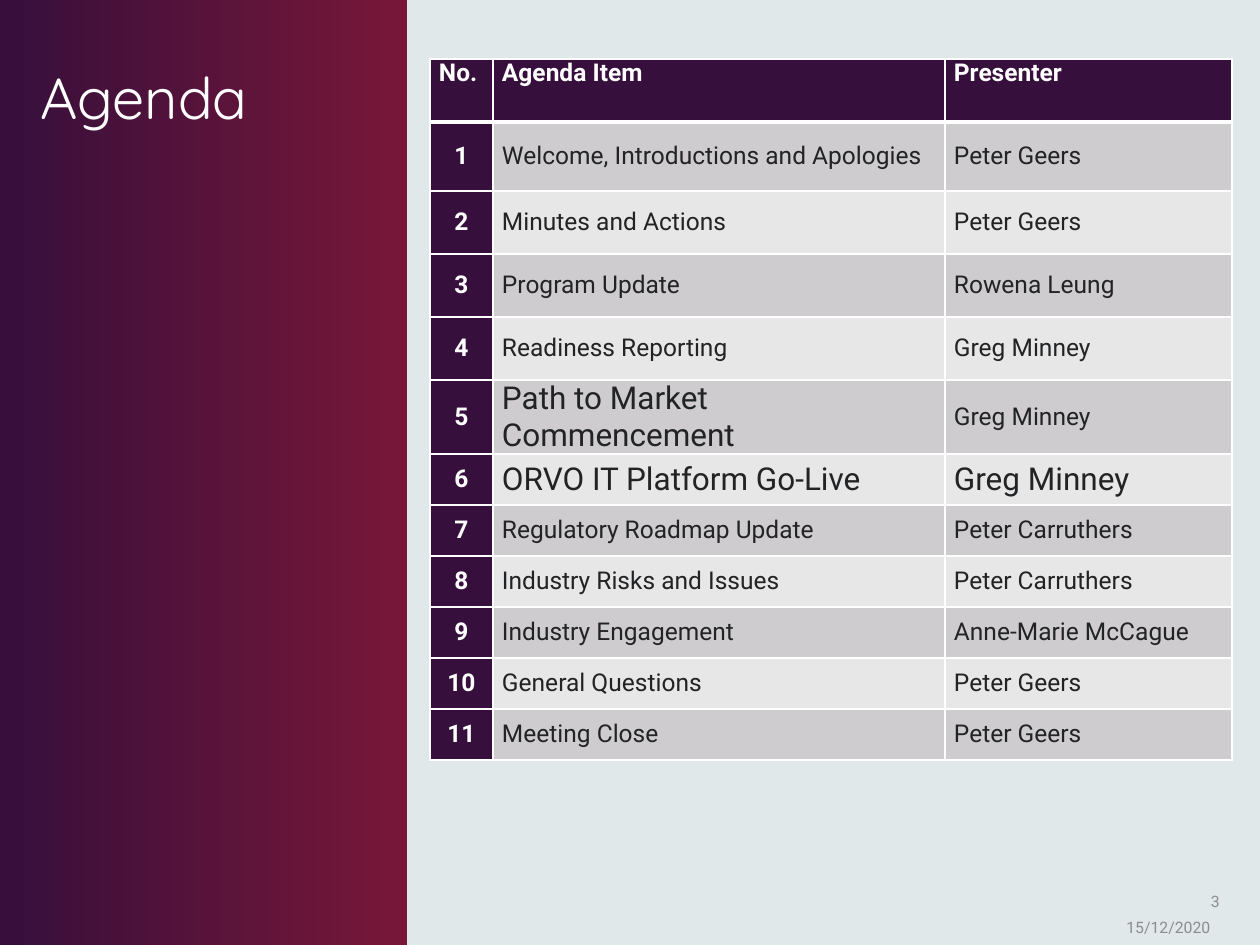
from dataclasses import dataclass

from lxml import etree
from pptx import Presentation
from pptx import util as u
from pptx.dml.color import RGBColor
from pptx.enum import shapes, text
from pptx.oxml.ns import qn

PX_PER_INCH = 126
PURPLE = RGBColor(0x36, 0x0F, 0x3C)
CRIMSON = RGBColor(0x77, 0x17, 0x38)
PALE = RGBColor(0xE0, 0xE8, 0xEA)
WHITE = RGBColor(0xFF, 0xFF, 0xFF)
INK = RGBColor(0x22, 0x23, 0x24)
MUTED = RGBColor(0x8D, 0x8D, 0x8E)
BANDS = RGBColor(0xCE, 0xCC, 0xCE), RGBColor(0xE8, 0xE7, 0xE8)

HEADINGS = "No.", "Agenda Item", "Presenter"
HEADING_HEIGHT = 63
COLUMN_WIDTHS = 63, 452, 287


@dataclass
class AgendaItem:
    title: str
    presenter: str
    height: int = 51
    title_size: int = 14
    presenter_size: int = 14


@dataclass
class FooterText:
    words: str
    box: tuple[int, int, int, int]
    align: text.PP_ALIGN


ITEMS = [
    AgendaItem("Welcome, Introductions and Apologies", "Peter Geers", 69),
    AgendaItem("Minutes and Actions", "Peter Geers", 63),
    AgendaItem("Program Update", "Rowena Leung", 63),
    AgendaItem("Readiness Reporting", "Greg Minney", 63),
    AgendaItem("Path to Market Commencement", "Greg Minney", 74, 18),
    AgendaItem("ORVO IT Platform Go-Live", "Greg Minney", 51, 18, 18),
    AgendaItem("Regulatory Roadmap Update", "Peter Carruthers"),
    AgendaItem("Industry Risks and Issues", "Peter Carruthers"),
    AgendaItem("Industry Engagement", "Anne-Marie McCague"),
    AgendaItem("General Questions", "Peter Geers"),
    AgendaItem("Meeting Close", "Peter Geers"),
]

FOOTERS = [
    FooterText("15/12/2020", (1114, 902, 179, 50), text.PP_ALIGN.LEFT),
    FooterText("3", (1173, 876, 59, 50), text.PP_ALIGN.RIGHT),
]


def px(n: int) -> int:
    return round(n * u.Inches(1) / PX_PER_INCH)


def write(p, words: str, size: int, color: RGBColor, bold: bool = False,
          font: str = "Roboto") -> None:
    r = p.add_run()
    r.text = words
    for name, value in {"name": font, "size": u.Pt(size), "bold": bold}.items():
        setattr(r.font, name, value)
    r.font.color.rgb = color


def set_borders(cell, top: int = 1, bottom: int = 1) -> None:
    """Draw white borders, with top and bottom widths in points."""
    tc_pr = cell._tc.get_or_add_tcPr()
    widths = {"lnL": 1, "lnR": 1, "lnT": top, "lnB": bottom}
    for i, (tag, width) in enumerate(widths.items()):
        ln = etree.Element(qn(f"a:{tag}"), w=str(u.Pt(width)))
        fill = etree.SubElement(ln, qn("a:solidFill"))
        etree.SubElement(fill, qn("a:srgbClr"), val=str(WHITE))
        tc_pr.insert(i, ln)


def fill_cell(cell, words: str, fill: RGBColor, size: int = 14,
              align: text.PP_ALIGN = text.PP_ALIGN.LEFT,
              anchor: text.MSO_ANCHOR = text.MSO_ANCHOR.MIDDLE) -> None:
    cell.fill.solid()
    cell.fill.fore_color.rgb = fill
    formats = {"margin_left": px(9), "margin_right": px(9), "margin_top": 0,
               "margin_bottom": 0, "vertical_anchor": anchor}
    for name, value in formats.items():
        setattr(cell, name, value)
    p = cell.text_frame.paragraphs[0]
    p.alignment = align
    if size == 14:
        p.space_after = u.Pt(6)
    dark = fill == PURPLE
    write(p, words, size, WHITE if dark else INK, bold=dark)


def add_panel(s) -> None:
    sp = s.shapes.add_shape(shapes.MSO_SHAPE.RECTANGLE, 0, 0, px(407), px(945))
    sp.shadow.inherit = False
    sp.line.fill.background()
    sp.fill.gradient()
    sp.fill.gradient_angle = 0
    for stop, color, position in zip(sp.fill.gradient_stops, (PURPLE, CRIMSON), (0, 0.99)):
        stop.color.rgb = color
        stop.position = position
    s.shapes._spTree.insert(2, sp._element)  # behind the title


def set_title(s) -> None:
    sp = s.shapes.title
    sp.left, sp.top, sp.width, sp.height = map(px, (28, 63, 343, 183))
    tf = sp.text_frame
    tf.vertical_anchor = text.MSO_ANCHOR.TOP
    p = tf.paragraphs[0]
    p.alignment = text.PP_ALIGN.LEFT
    p.line_spacing = 0.9
    write(p, "Agenda", 33, WHITE, font="Quicksand")


def add_agenda(s) -> None:
    heights = [HEADING_HEIGHT] + [item.height for item in ITEMS]
    table = s.shapes.add_table(len(heights), len(COLUMN_WIDTHS), px(430), px(59),
                               px(sum(COLUMN_WIDTHS)), px(sum(heights))).table
    for column, width in zip(table.columns, COLUMN_WIDTHS):
        column.width = px(width)
    for row, height in zip(table.rows, heights):
        row.height = px(height)

    for col, heading in enumerate(HEADINGS):
        fill_cell(table.cell(0, col), heading, PURPLE, anchor=text.MSO_ANCHOR.TOP)
    for n, item in enumerate(ITEMS, 1):
        band = BANDS[(n - 1) % 2]
        fill_cell(table.cell(n, 0), str(n), PURPLE, align=text.PP_ALIGN.CENTER)
        fill_cell(table.cell(n, 1), item.title, band, item.title_size)
        fill_cell(table.cell(n, 2), item.presenter, band, item.presenter_size)

    for n, row in enumerate(table.rows):
        for cell in row.cells:
            set_borders(cell, top=3 if n == 1 else 1, bottom=3 if n == 0 else 1)


def add_footer(s, footer: FooterText) -> None:
    tf = s.shapes.add_textbox(*map(px, footer.box)).text_frame
    tf.word_wrap = True
    tf.vertical_anchor = text.MSO_ANCHOR.MIDDLE
    p = tf.paragraphs[0]
    p.alignment = footer.align
    write(p, footer.words, 9, MUTED)


def main() -> None:
    prs = Presentation()
    prs.slide_width, prs.slide_height = px(1260), px(945)
    s = prs.slides.add_slide(prs.slide_layouts[5])
    s.background.fill.solid()
    s.background.fill.fore_color.rgb = PALE
    add_panel(s)
    set_title(s)
    add_agenda(s)
    for footer in FOOTERS:
        add_footer(s, footer)
    prs.save("out.pptx")


if __name__ == "__main__":
    main()
